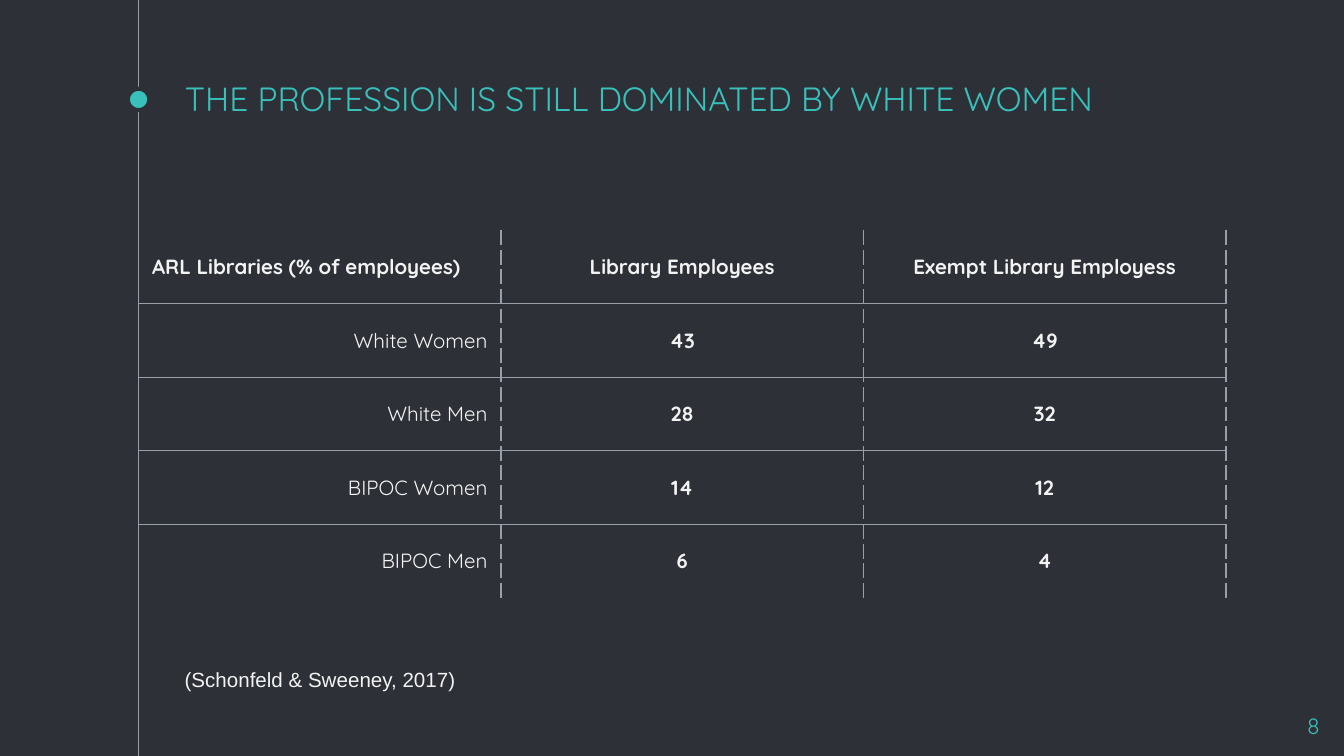
from dataclasses import dataclass

from lxml import etree
from pptx import Presentation
from pptx.dml.color import RGBColor
from pptx.enum.shapes import MSO_CONNECTOR, MSO_SHAPE
from pptx.enum.text import MSO_ANCHOR, MSO_AUTO_SIZE, PP_ALIGN
from pptx.oxml.ns import qn
from pptx.util import Pt

LEFT, CENTER, RIGHT = PP_ALIGN.LEFT, PP_ALIGN.CENTER, PP_ALIGN.RIGHT
TOP, MIDDLE, BOTTOM = MSO_ANCHOR.TOP, MSO_ANCHOR.MIDDLE, MSO_ANCHOR.BOTTOM
STRAIGHT = MSO_CONNECTOR.STRAIGHT
OVAL = MSO_SHAPE.OVAL
NO_AUTOFIT = MSO_AUTO_SIZE.NONE

DARK, TEAL, GRAY, PALE = "2E3037", "39C0BA", "999FA9", "F3F3F3"
FONT = "Quicksand"
SLIDE_WIDTH, SLIDE_HEIGHT = 720, 405
RAIL_X = 74.25
RAIL_WIDTH = 0.75
DOT_SIZE, DOT_MIDDLE = 11.5, 53.3
TABLE_TOP, COLUMN_WIDTH, ROW_HEIGHT = 123.3, 194.2, 39.4

ROWS = [
    ("ARL Libraries (% of employees)", "Library Employees", "Exempt Library Employess"),
    ("White Women", "43", "49"),
    ("White Men", "28", "32"),
    ("BIPOC Women", "14", "12"),
    ("BIPOC Men", "6", "4"),
]


@dataclass
class Style:
    size: float
    color: str
    font: str = FONT
    bold: bool = False
    align: PP_ALIGN = LEFT


@dataclass
class Box:
    left: float
    top: float
    width: float
    height: float


def rgb(color: str) -> RGBColor:
    return RGBColor.from_string(color)


def write(frame, text: str, style: Style) -> None:
    frame.text = text
    para = frame.paragraphs[0]
    para.alignment = style.align
    font = para.runs[0].font
    font.name, font.size, font.bold = style.font, Pt(style.size), style.bold
    font.color.rgb = rgb(style.color)


def fit_frame(frame, anchor: MSO_ANCHOR, inset: float) -> None:
    frame.word_wrap = True
    frame.auto_size = NO_AUTOFIT
    frame.vertical_anchor = anchor
    frame.margin_left = frame.margin_right = Pt(7.2)
    frame.margin_top = frame.margin_bottom = Pt(inset)


def add_label(slide, box: Box, text: str, style: Style, inset: float) -> None:
    label = slide.shapes.add_textbox(Pt(box.left), Pt(box.top), Pt(box.width), Pt(box.height))
    fit_frame(label.text_frame, TOP, inset)
    write(label.text_frame, text, style)


def add_border(cell, side: str, dash: str, visible: bool = True) -> None:
    line = etree.SubElement(cell._tc.get_or_add_tcPr(), qn(f"a:ln{side}"), w=str(Pt(0.75)))
    if not visible:
        etree.SubElement(line, qn("a:noFill"))
        return
    fill = etree.SubElement(line, qn("a:solidFill"))
    etree.SubElement(fill, qn("a:srgbClr"), val=GRAY)
    etree.SubElement(line, qn("a:prstDash"), val=dash)


def add_rail(slide) -> None:
    rail = slide.shapes.add_connector(STRAIGHT, Pt(RAIL_X), 0, Pt(RAIL_X), Pt(SLIDE_HEIGHT))
    rail.line.color.rgb = rgb(GRAY)
    rail.line.width = Pt(RAIL_WIDTH)
    etree.SubElement(rail._element.spPr, qn("a:effectLst"))

    dot = slide.shapes.add_shape(
        OVAL, Pt(RAIL_X - DOT_SIZE / 2), Pt(DOT_MIDDLE - DOT_SIZE / 2), Pt(DOT_SIZE), Pt(DOT_SIZE)
    )
    dot.shadow.inherit = False
    dot.fill.solid()
    dot.fill.fore_color.rgb = rgb(TEAL)
    dot.line.color.rgb = rgb(DARK)
    dot.line.width = Pt(2.25)


def add_staff_table(slide) -> None:
    row_count, column_count = len(ROWS), len(ROWS[0])
    table = slide.shapes.add_table(
        row_count, column_count, Pt(RAIL_X), Pt(TABLE_TOP),
        Pt(COLUMN_WIDTH * column_count), Pt(ROW_HEIGHT * row_count),
    ).table
    table.first_row = table.horz_banding = False
    for column in table.columns:
        column.width = Pt(COLUMN_WIDTH)
    for row_index, values in enumerate(ROWS):
        table.rows[row_index].height = Pt(ROW_HEIGHT)
        for column_index, value in enumerate(values):
            cell = table.cell(row_index, column_index)
            header, row_name = row_index == 0, column_index == 0
            align = CENTER if not row_name else LEFT if header else RIGHT
            bold = header or not row_name
            write(cell.text_frame, value, Style(11, PALE, bold=bold, align=align))
            cell.vertical_anchor = MIDDLE
            cell.margin_left = cell.margin_right = Pt(7.2)
            cell.margin_top = cell.margin_bottom = Pt(5)
            # Dashed columns, solid rules between rows, open top and bottom
            add_border(cell, "L", "dash")
            add_border(cell, "R", "dash")
            add_border(cell, "T", "solid", visible=not header)
            add_border(cell, "B", "solid", visible=row_index < row_count - 1)
            cell.fill.background()


def main() -> None:
    deck = Presentation()
    deck.slide_width, deck.slide_height = Pt(SLIDE_WIDTH), Pt(SLIDE_HEIGHT)
    slide = deck.slides.add_slide(deck.slide_layouts[5])
    slide.background.fill.solid()
    slide.background.fill.fore_color.rgb = rgb(DARK)

    # Vertical rail with its marker
    add_rail(slide)

    # Title
    title = slide.shapes.title
    title.left, title.top, title.width, title.height = Pt(91.8), Pt(43.2), Pt(540), Pt(27.4)
    fit_frame(title.text_frame, BOTTOM, 7.2)
    write(title.text_frame, "THE PROFESSION IS STILL DOMINATED BY WHITE WOMEN", Style(18, TEAL))

    # Staff shares
    add_staff_table(slide)

    # Slide number and citation
    add_label(slide, Box(671, 374.4, 43.2, 24.5), "8", Style(12, TEAL, align=RIGHT), 7.2)
    add_label(slide, Box(91.8, 353.5, 582.5, 20.9), "(Schonfeld & Sweeney, 2017)",
              Style(11, PALE, font="Arial"), 3.6)

    deck.save("out.pptx")


if __name__ == "__main__":
    main()
